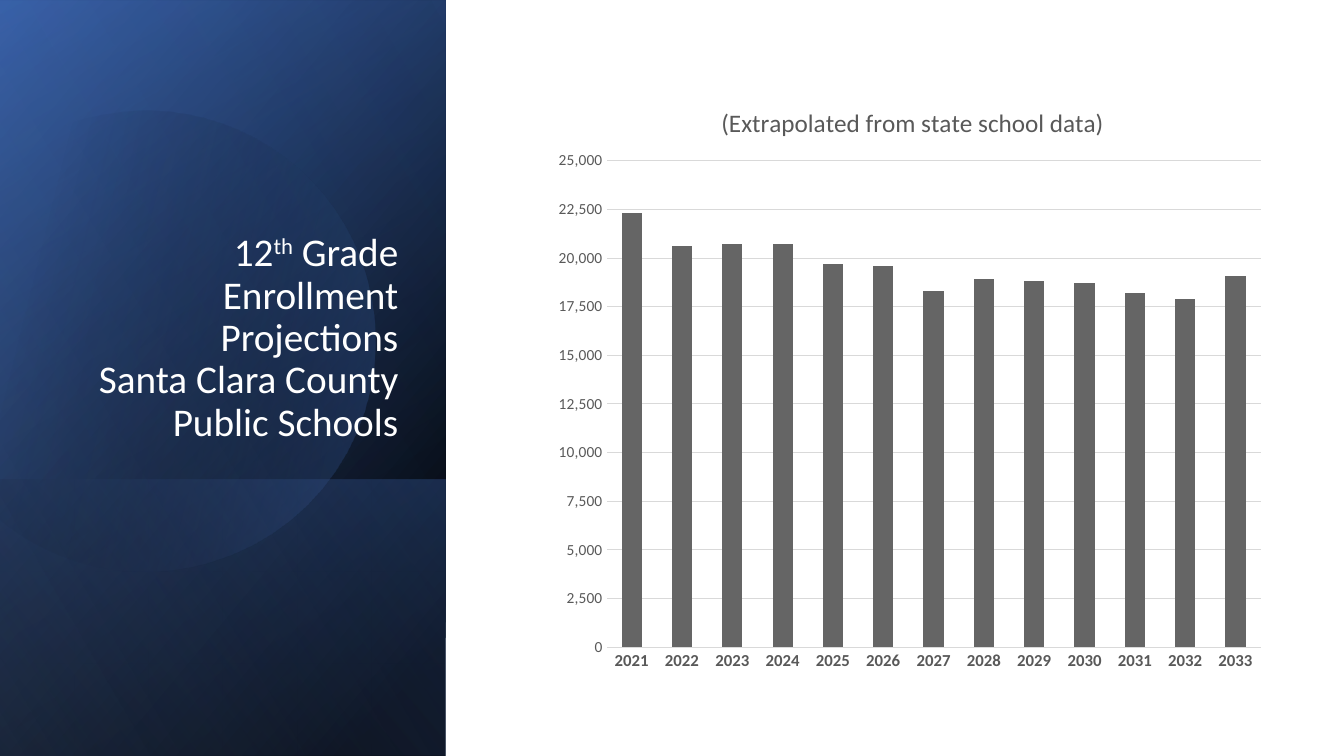
from math import cos, radians, sin
from lxml.etree import SubElement
from pptx import Presentation
from pptx.chart.data import CategoryChartData
from pptx.dml.color import RGBColor
from pptx.enum.chart import XL_CHART_TYPE, XL_TICK_MARK
from pptx.enum.shapes import MSO_SHAPE
from pptx.enum.text import MSO_ANCHOR, MSO_AUTO_SIZE, PP_ALIGN
from pptx.oxml.ns import qn
from pptx.util import Inches, Pt

FONT = "Calibri"
HEX = {
    "black": "000000",
    "navy": "2F5597",
    "blue": "4472C4",
    "pale": "8FAADC",
    "white": "FFFFFF",
    "text": "595959",
    "grid": "D9D9D9",
    "bar": "656565",
}
RGB = {name: RGBColor.from_string(code) for name, code in HEX.items()}


def paint(shape, angle, stops):
    shape.shadow.inherit = False
    shape.line.fill.background()
    shape.fill.background()
    props = shape._element.spPr
    blank = props.find(qn("a:noFill"))
    grad = SubElement(props, qn("a:gradFill"), rotWithShape="1")
    props.replace(blank, grad)
    items = SubElement(grad, qn("a:gsLst"))
    for place, name, alpha in stops:
        stop = SubElement(items, qn("a:gs"), pos=str(place * 1000))
        color = SubElement(stop, qn("a:srgbClr"), val=HEX[name])
        SubElement(color, qn("a:alpha"), val=str(alpha * 1000))
    SubElement(grad, qn("a:lin"), ang=str(angle * 60000), scaled="0")


def panel(left, top, width, angle, stops):
    shape = slide.shapes.add_shape(
        MSO_SHAPE.RECTANGLE, Inches(left), Inches(top), Inches(width), Inches(4.42)
    )
    shape.rotation = 90
    shape._element.spPr.find(qn("a:xfrm")).set("flipH", "1")
    paint(shape, angle, stops)


deck = Presentation()
deck.slide_width = Inches(13.33)
deck.slide_height = Inches(7.5)
slide = deck.slides.add_slide(deck.slide_layouts[5])

panel(-1.54, 1.54, 7.5, 50, [(8, "black", 100), (100, "navy", 100)])
panel(-1.54, 1.55, 7.5, 30, [(0, "black", 0), (99, "blue", 46)])
panel(0.84, 3.92, 2.74, 130, [(2, "blue", 29), (100, "black", 30)])

curves = [
    [(1.49, 1.1), (2.46, 1.12), (3.35, 1.77), (3.63, 2.75)],
    [(3.63, 2.75), (3.98, 3.97), (3.28, 5.23), (2.07, 5.58)],
    [(2.07, 5.58), (1.31, 5.8), (0.53, 5.61), (-0.03, 5.14)],
    [(0, 1.61), (0.23, 1.42), (0.5, 1.28), (0.8, 1.19)],
    [(0.8, 1.19), (1.03, 1.13), (1.26, 1.1), (1.49, 1.1)],
]
arcs = []
for curve in curves:
    arc = []
    for step in range(17):
        t = step / 16
        parts = ((1 - t) ** 3, 3 * t * (1 - t) ** 2, 3 * t**2 * (1 - t), t**3)
        arc.append([sum(p * point[k] for p, point in zip(parts, curve)) for k in (0, 1)])
    arcs.append(arc)
edge = [(-0.15, 5.03), (-0.15, 1.75)]
outline = sum(arcs[:3], []) + edge + sum(arcs[3:], [])
tilt = radians(16.1)
mid_x, mid_y = 1.58, 3.35
points = []
for x, y in outline:
    dx, dy = x - mid_x, y - mid_y
    points.append((
        Inches(mid_x + dx * cos(tilt) - dy * sin(tilt)),
        Inches(mid_y + dx * sin(tilt) + dy * cos(tilt)),
    ))
pen = slide.shapes.build_freeform(*points[0])
pen.add_line_segments(points[1:], close=True)
disc = pen.convert_to_shape()
disc.rotation = 343.9
paint(disc, 30, [(29, "black", 0), (100, "blue", 43)])

panel(-1.54, 1.54, 7.5, 120, [(0, "black", 0), (99, "pale", 11)])

title = slide.shapes.title
title.left, title.top = Inches(0.64), Inches(1.84)
title.width, title.height = Inches(3.41), Inches(2.62)
frame = title.text_frame
frame.word_wrap = True
frame.auto_size = MSO_AUTO_SIZE.NONE
frame.vertical_anchor = MSO_ANCHOR.BOTTOM
head = frame.paragraphs[0]
head.alignment = PP_ALIGN.RIGHT
head.line_spacing = 0.9
head.font.name = FONT
head.font.size = Pt(28)
head.font.color.rgb = RGB["white"]
head.add_run().text = "12"
power = head.add_run()
power.text = "th"
power._r.get_or_add_rPr().set("baseline", "30000")
head.add_run().text = " Grade Enrollment Projections"
head.add_line_break()
head.add_run().text = "Santa Clara County Public Schools"
slide.shapes._spTree.append(title._element)

data = CategoryChartData(number_format="#,##0")
data.categories = [str(year) for year in range(2021, 2034)]
data.add_series("Series 1", [
    22300, 20600, 20700, 20700, 19700, 19600, 18300,
    18900, 18800, 18700, 18200, 17900, 19100,
])
chart = slide.shapes.add_chart(
    XL_CHART_TYPE.COLUMN_CLUSTERED,
    Inches(5.36), Inches(0.82), Inches(7.29), Inches(5.96), data,
).chart
chart.has_legend = False
chart.font.name = FONT
chart.font.size = Pt(10)
chart.font.color.rgb = RGB["black"]

chart.has_title = True
label = chart.chart_title.text_frame.paragraphs[0]
label.text = "(Extrapolated from state school data)"
label.font.name = FONT
label.font.size = Pt(18)
label.font.bold = False
label.font.color.rgb = RGB["text"]
chart.chart_title.include_in_layout = False

plot = chart.plots[0]
plot.gap_width = 150
plot.vary_by_categories = False
bars = plot.series[0].format.fill
bars.solid()
bars.fore_color.rgb = RGB["bar"]

for axis, size, bold in [(chart.category_axis, 12, True), (chart.value_axis, 11, False)]:
    axis.major_tick_mark = XL_TICK_MARK.NONE
    axis.minor_tick_mark = XL_TICK_MARK.NONE
    axis.format.line.fill.background()
    font = axis.tick_labels.font
    font.name = FONT
    font.size = Pt(size)
    font.bold = bold
    font.color.rgb = RGB["text"]

axis = chart.value_axis
axis.minimum_scale = 0
axis.maximum_scale = 25000
axis.major_unit = 2500
axis.tick_labels.number_format = "#,##0"
axis.tick_labels.number_format_is_linked = False
axis.has_major_gridlines = True
axis.major_gridlines.format.line.width = Pt(0.75)
axis.major_gridlines.format.line.color.rgb = RGB["grid"]

area = chart._chartSpace.xpath("c:chart/c:plotArea")[0]
for node, index, spots in [
    (chart.chart_title._element, 1, {"x": 0.24, "y": 0.03}),
    (area, 0, {"x": 0.09, "y": 0.13, "w": 0.89, "h": 0.81}),
]:
    for old in node.findall(qn("c:layout")):
        node.remove(old)
    layout = SubElement(node, qn("c:layout"))
    node.insert(index, layout)
    manual = SubElement(layout, qn("c:manualLayout"))
    if node is area:
        SubElement(manual, qn("c:layoutTarget"), val="inner")
    for side in ("x", "y"):
        SubElement(manual, qn(f"c:{side}Mode"), val="edge")
    for key, value in spots.items():
        SubElement(manual, qn(f"c:{key}"), val=str(value))

deck.save("out.pptx")
